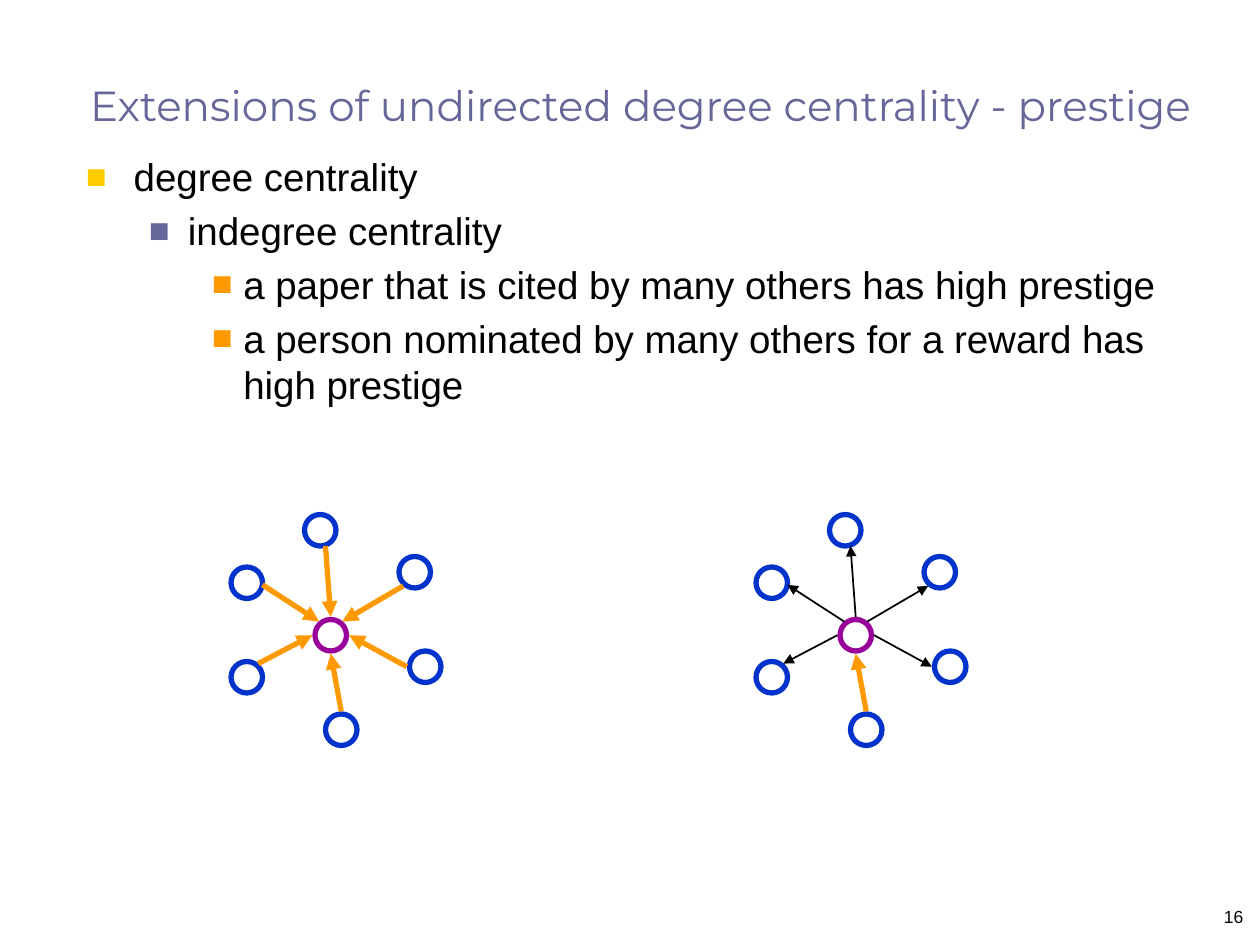
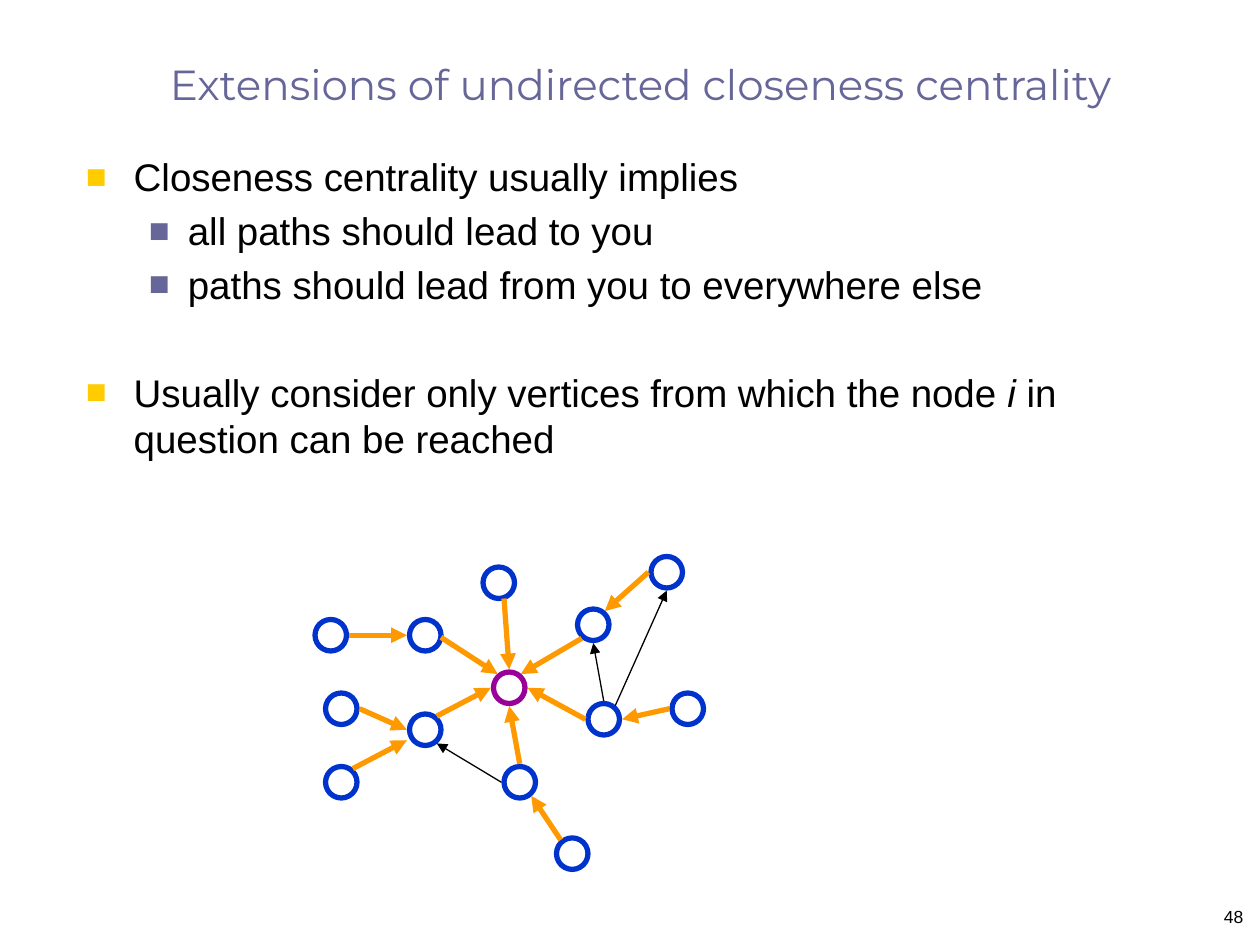
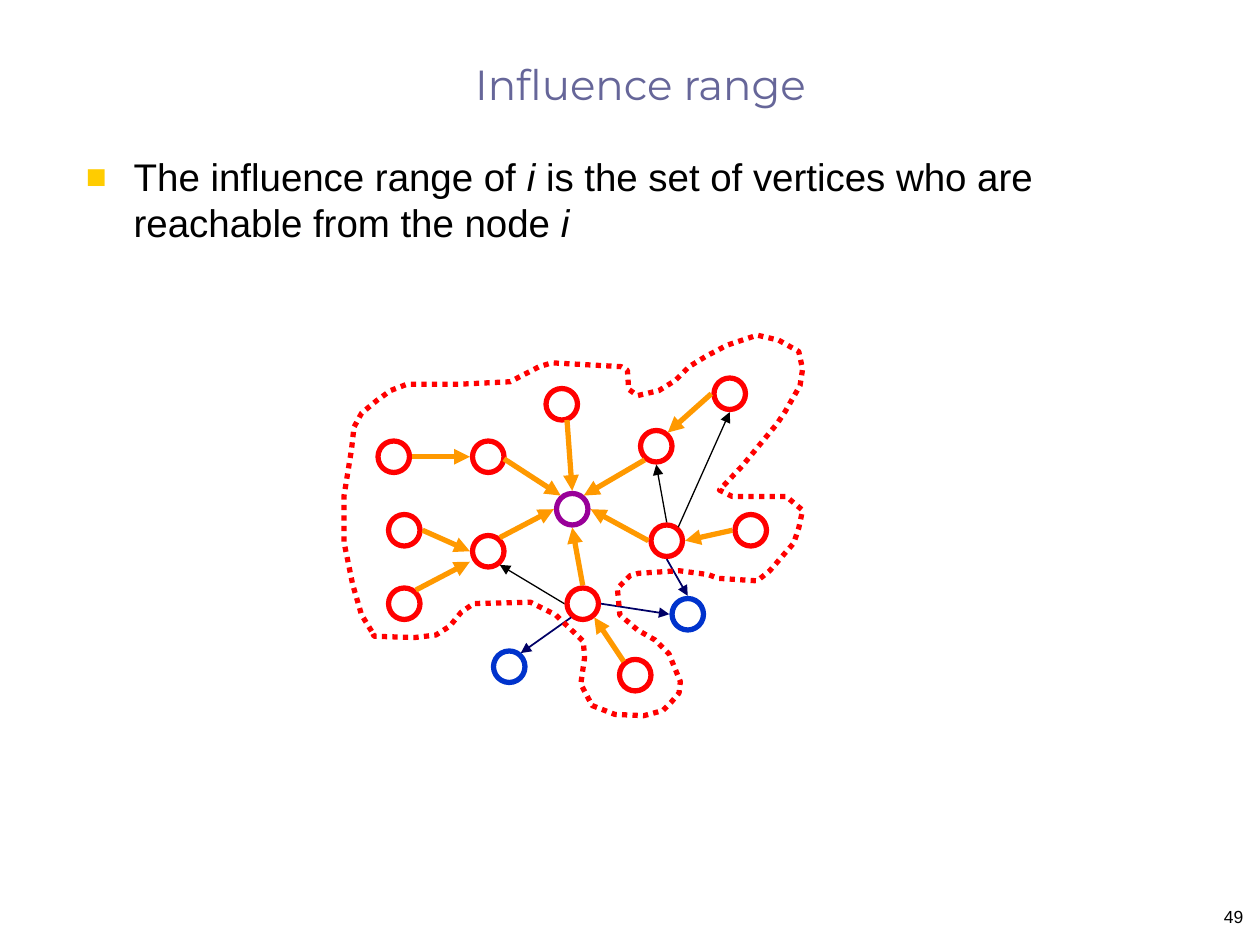
from dataclasses import dataclass
from lxml import etree
from pptx import Presentation
from pptx.dml.color import RGBColor
from pptx.enum.dml import MSO_LINE_DASH_STYLE as Dash
from pptx.enum.shapes import MSO_CONNECTOR as Connector, MSO_SHAPE as Shape
from pptx.enum.text import MSO_ANCHOR as Anchor, PP_ALIGN as Align
from pptx.oxml.ns import qn
from pptx.util import Inches, Pt


@dataclass(frozen=True)
class Theme:
    """Colours, fonts and sizes shared by all slides."""
    slate: str = "666699"
    yellow: str = "FFCC00"
    orange: str = "FF9900"
    purple: str = "990099"
    blue: str = "0033CC"
    red: str = "FF0000"
    navy: str = "000066"
    black: str = "000000"
    title_font: str = "Montserrat"
    body_font: str = "Arial"
    title_size: float = 24
    body_size: float = 22
    number_size: float = 10
    thick: float = 3


THEME = Theme()
CELL = Inches(1) / 12
NODE = 3
LEVELS = [(THEME.yellow, 0.38, 0.38), (THEME.slate, 0.81, 0.31), (THEME.orange, 1.25, 0.25)]
PORTS = {
    "N": (0, -1.75), "S": (0, 1.75), "W": (-1.75, 0), "E": (1.75, 0),
    "NW": (-1.1, -1.3), "NE": (1.1, -1.3), "SW": (-1.1, 1.3), "SE": (1.1, 1.3),
    "ESE": (1.5, 0.2), "SSE": (0.5, 1.5), "WSW": (-1.75, 1),
}
STAR = {"hub": (0, 0), "upper left": (-8, -5), "top": (-1, -10), "upper right": (8, -6),
        "right": (9, 3), "lower left": (-8, 4), "bottom": (1, 9)}
OUTER = {"far lower left": (-16, 9), "far upper left": (-17, -5), "far left": (-16, 2),
         "far upper right": (15, -11), "far right": (17, 2), "far bottom": (6, 15.8)}
UNREACHED = {"outside left": (-6, 15), "outside right": (11, 10)}
SPOKES = [
    ("lower left", "NE", "hub", "W"), ("upper left", "ESE", "hub", "NW"),
    ("top", "SSE", "hub", "N"), ("right", "W", "hub", "E"),
    ("upper right", "SW", "hub", "NE"), ("bottom", "N", "hub", "S"),
]
OUTER_LINKS = [
    ("far lower left", "NE", "lower left", "WSW"), ("far upper left", "E", "upper left", "W"),
    ("far left", "E", "lower left", "W"), ("far upper right", "W", "upper right", "NE"),
    ("far right", "W", "right", "E"), ("far bottom", "NW", "bottom", "SE"),
]
CROSS_LINKS = [
    ("right", "N", "upper right", "S"), ("right", "NE", "far upper right", "S"),
    ("bottom", "W", "lower left", "SE"),
]
EXIT_LINKS = [
    ("bottom", "SW", "outside left", "NE"), ("bottom", "E", "outside right", "W"),
    ("right", "S", "outside right", "N"),
]
RANGE_OUTLINE = [
    (295, 501), (287, 488), (280, 464), (273, 430), (273, 394), (279, 357), (281, 339),
    (287, 328), (299, 318), (310, 310), (323, 305), (364, 305), (405, 303), (428, 291),
    (438, 288), (493, 291), (498, 294), (499, 309), (506, 314), (523, 310), (536, 302),
    (547, 291), (560, 283), (577, 274), (601, 266), (618, 270), (634, 279), (637, 293),
    (635, 306), (623, 327), (617, 336), (589, 370), (571, 389), (581, 394), (624, 394),
    (637, 405), (634, 419), (630, 431), (611, 453), (601, 461), (570, 459), (562, 456),
    (539, 453), (507, 455), (500, 457), (490, 467), (492, 488), (506, 500), (520, 508),
    (531, 519), (540, 541), (539, 550), (533, 557), (526, 564), (511, 568), (488, 567),
    (470, 560), (461, 543), (464, 522), (463, 509), (441, 488), (421, 478), (376, 479),
    (366, 486), (357, 497), (346, 504), (329, 506), (297, 505),
]


def cells(*values):
    """Turn grid cells into slide lengths."""
    return [round(value * CELL) for value in values]


def style_line(line, colour, width):
    """Set a line's colour and width in points."""
    line.color.rgb = RGBColor.from_string(colour)
    line.width = Pt(width)


def add_span(para, text, **formats):
    """Add a run of text with the given font values."""
    span = para.add_run()
    span.text = text
    span.font.color.rgb = RGBColor.from_string(formats.pop("colour", THEME.black))
    for name, value in formats.items():
        setattr(span.font, name, value)


def add_box(page, left, top, width, height, **formats):
    """Add a wrapping text box on the grid and return its frame."""
    frame = page.shapes.add_textbox(*cells(left, top, width, height)).text_frame
    for name, value in {"word_wrap": True, **formats}.items():
        setattr(frame, name, value)
    return frame


def add_title(page, text, top):
    """Add the centred slide title."""
    para = add_box(page, 7, top, 108, 7, vertical_anchor=Anchor.BOTTOM).paragraphs[0]
    para.alignment = Align.CENTER
    add_span(para, text, name=THEME.title_font, size=Pt(THEME.title_size), colour=THEME.slate)


def add_number(page, number):
    """Add the slide number in the lower right corner."""
    para = add_box(page, 114.6, 85.7, 5, 4).paragraphs[0]
    para.alignment = Align.RIGHT
    add_span(para, str(number), name=THEME.body_font, size=Pt(THEME.number_size))


def set_bullet(para, level):
    """Give a paragraph its level's square bullet and hanging indent."""
    colour, margin, hang = LEVELS[level]
    props = para._p.get_or_add_pPr()
    props.set("lvl", str(level))
    props.set("marL", str(Inches(margin)))
    props.set("indent", str(-Inches(hang)))
    holder = etree.SubElement(props, qn("a:buClr"))
    etree.SubElement(holder, qn("a:srgbClr"), val=colour)
    etree.SubElement(props, qn("a:buSzPct"), val="90000")
    etree.SubElement(props, qn("a:buFont"), typeface=THEME.body_font)
    etree.SubElement(props, qn("a:buChar"), char="■")


def add_bullets(page, items, height=66):
    """Add bulleted items of level, space before and spans; odd spans are italic."""
    frame = add_box(page, 7, 14, 108, height)
    for index, (level, space, *spans) in enumerate(items):
        para = frame.add_paragraph() if index else frame.paragraphs[0]
        set_bullet(para, level)
        if index:
            para.space_before = Pt(space)
        for order, text in enumerate(spans):
            add_span(para, text, name=THEME.body_font, size=Pt(THEME.body_size),
                     italic=order % 2 == 1)


def add_nodes(shapes, origin, nodes, colour):
    """Draw nodes as rings around the origin; the hub is purple."""
    for name, (column, row) in nodes.items():
        ring = shapes.add_shape(
            Shape.OVAL, *cells(origin[0] + column, origin[1] + row, NODE, NODE))
        ring.shadow.inherit = False
        ring.fill.background()
        style_line(ring.line, THEME.purple if name == "hub" else colour, THEME.thick)


def port_at(origin, node, port):
    """Find the place of a port beside a node."""
    offset = {**STAR, **OUTER, **UNREACHED}[node]
    return cells(*(start + step + NODE / 2 + gap
                   for start, step, gap in zip(origin, offset, PORTS[port])))


def add_arrows(shapes, origin, links, colour=THEME.orange, width=THEME.thick):
    """Draw an arrow for each link between two node ports."""
    for source, source_port, target, target_port in links:
        arrow = shapes.add_connector(
            Connector.STRAIGHT, *port_at(origin, source, source_port),
            *port_at(origin, target, target_port))
        style_line(arrow.line, colour, width)
        etree.SubElement(arrow.line._get_or_add_ln(), qn("a:tailEnd"), type="triangle")
        etree.SubElement(arrow._element.spPr, qn("a:effectLst"))


def add_wide_network(shapes, origin, colour):
    """Draw the star with its outer nodes and cross links."""
    add_nodes(shapes, origin, {**STAR, **OUTER}, colour)
    add_arrows(shapes, origin, SPOKES + OUTER_LINKS)
    add_arrows(shapes, origin, CROSS_LINKS, THEME.black, 0.75)


def add_range_outline(page):
    """Draw the dotted border of the influence range."""
    builder = page.shapes.build_freeform(*RANGE_OUTLINE[0], scale=Inches(0.01))
    builder.add_line_segments(RANGE_OUTLINE[1:], close=True)
    outline = builder.convert_to_shape()
    outline.shadow.inherit = False
    outline.fill.background()
    style_line(outline.line, THEME.red, THEME.thick)
    outline.line.dash_style = Dash.ROUND_DOT


def add_page(deck, title, title_top, number):
    """Add a blank slide with its title and number."""
    page = deck.slides.add_slide(deck.slide_layouts[6])
    add_title(page, title, title_top)
    add_number(page, number)
    return page


def build_prestige(deck):
    """Build the slide on degree prestige."""
    page = add_page(deck, "Extensions of undirected degree centrality - prestige", 6, 16)
    add_bullets(page, [
        (0, 0, "degree centrality"),
        (1, 4.4, "indegree centrality"),
        (2, 4.4, "a paper that is cited by many others has high prestige"),
        (2, 4.4, "a person nominated by many others for a reward has high prestige"),
    ])
    cited, citing = (30, 59), (80, 59)
    for origin in (cited, citing):
        add_nodes(page.shapes, origin, STAR, THEME.blue)
    add_arrows(page.shapes, cited, SPOKES)
    add_arrows(page.shapes, citing, SPOKES[-1:])
    outward = [(hub, hub_port, node, port) for node, port, hub, hub_port in SPOKES[:-1]]
    add_arrows(page.shapes, citing, outward, THEME.black, 1)


def build_closeness(deck):
    """Build the slide on directed closeness."""
    page = add_page(deck, "Extensions of undirected closeness centrality", 4, 48)
    add_bullets(page, [
        (0, 0, "Closeness centrality usually implies"),
        (1, 4.4, "all paths should lead to you"),
        (1, 4.4, "paths should lead from you to everywhere else"),
        (0, 35.3, "Usually consider only vertices from which the node ", "i",
         " in question can be reached"),
    ], height=39)
    add_wide_network(page.shapes.add_group_shape().shapes, (47, 64), THEME.blue)


def build_influence(deck):
    """Build the slide on the influence range."""
    page = add_page(deck, "Influence range", 4, 49)
    add_bullets(page, [
        (0, 0, "The influence range of ", "i",
         " is the set of vertices who are reachable from the node ", "i"),
    ])
    origin = (53, 47)
    add_wide_network(page.shapes, origin, THEME.red)
    add_nodes(page.shapes, origin, UNREACHED, THEME.blue)
    add_arrows(page.shapes, origin, EXIT_LINKS, THEME.navy, 1)
    add_range_outline(page)


def main():
    """Build and save the deck."""
    deck = Presentation()
    deck.slide_width, deck.slide_height = Inches(10), Inches(7.5)
    for build in (build_prestige, build_closeness, build_influence):
        build(deck)
    deck.save("out.pptx")


if __name__ == "__main__":
    main()
